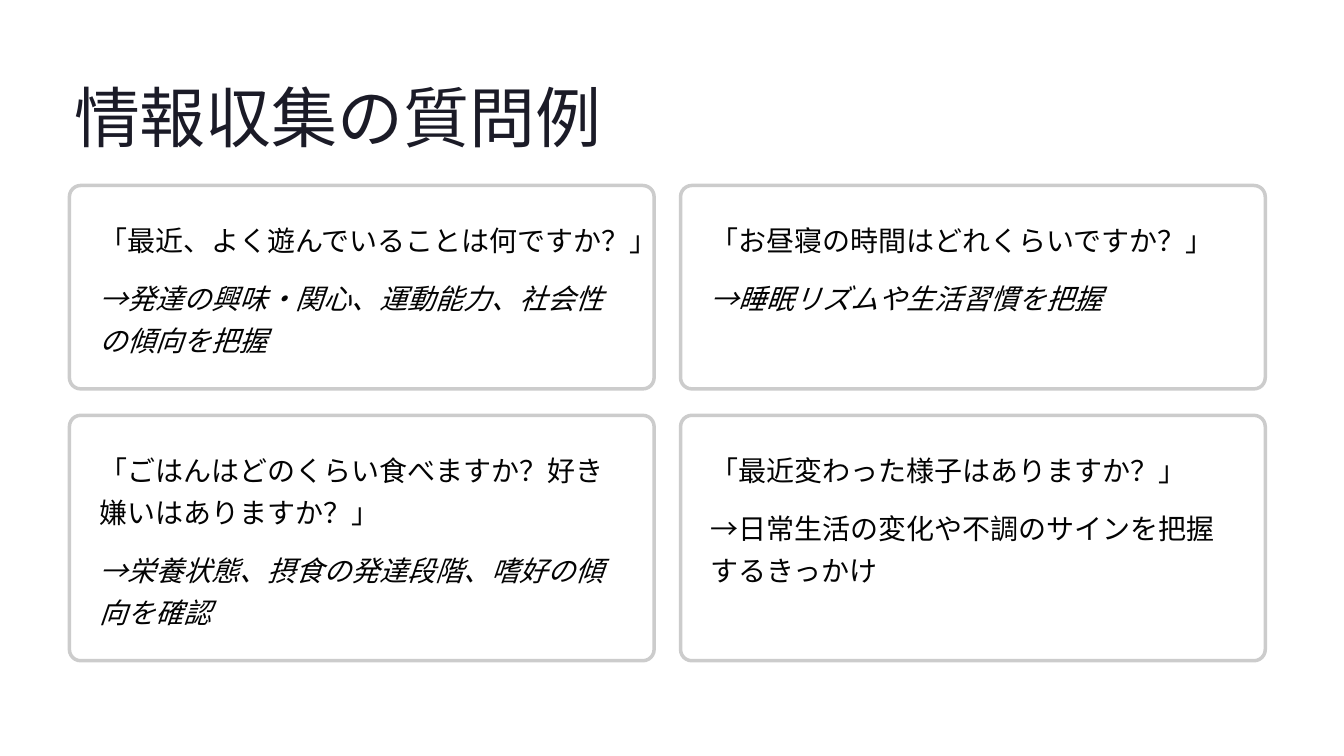
from dataclasses import dataclass

from lxml.etree import SubElement
from pptx import Presentation
from pptx.dml.color import RGBColor
from pptx.enum.shapes import MSO_SHAPE as Preset
from pptx.enum.text import MSO_ANCHOR as Anchor, MSO_AUTO_SIZE as AutoSize, PP_ALIGN as Align
from pptx.oxml.ns import qn
from pptx.slide import Slide
from pptx.text.text import TextFrame
from pptx.util import Cm, Pt


@dataclass(frozen=True)
class TextStyle:
    font: str
    size: float
    leading: float
    color: RGBColor


@dataclass(frozen=True)
class Theme:
    heading: TextStyle = TextStyle("Inter", 56.5, 70.5, RGBColor(0x1B, 0x1B, 0x27))
    body: TextStyle = TextStyle("Roboto", 24, 36, RGBColor(0x03, 0x03, 0x03))
    card_fill: RGBColor = RGBColor(0xFF, 0xFF, 0xFF)
    card_opacity: int = 95
    border: RGBColor = RGBColor(0xCC, 0xCC, 0xCC)
    border_width: float = 3


@dataclass(frozen=True)
class Card:
    question: str
    insight: str
    question_lines: int = 1
    insight_lines: int = 2
    italic_insight: bool = True


@dataclass(frozen=True)
class CardRow:
    height: float
    cards: tuple[Card, ...]


THEME = Theme()

# Lengths in centimetres
LEFT, TOP = 2.1, 5.61
CARD_WIDTH, GAP = 17.68, 0.8
PADDING, CORNER = 0.9, 0.34
LINE_HEIGHT, INSIGHT_GAP = 1.27, 0.48

ROWS = (
    CardRow(6.15, (
        Card("「最近、よく遊んでいることは何ですか？」",
             "→発達の興味・関心、運動能力、社会性の傾向を把握"),
        Card("「お昼寝の時間はどれくらいですか？」",
             "→睡眠リズムや生活習慣を把握", insight_lines=1),
    )),
    CardRow(7.42, (
        Card("「ごはんはどのくらい食べますか？好き嫌いはありますか？」",
             "→栄養状態、摂食の発達段階、嗜好の傾向を確認", question_lines=2),
        Card("「最近変わった様子はありますか？」",
             "→日常生活の変化や不調のサインを把握するきっかけ", italic_insight=False),
    )),
)


def write(frame: TextFrame, text: str, style: TextStyle,
          wrap: bool = False, italic: bool = False) -> None:
    frame.text = text
    frame.margin_left = frame.margin_right = frame.margin_top = frame.margin_bottom = 0
    frame.auto_size = AutoSize.NONE
    frame.word_wrap = wrap
    frame.vertical_anchor = Anchor.TOP
    paragraph = frame.paragraphs[0]
    paragraph.alignment = Align.LEFT
    paragraph.line_spacing = Pt(style.leading)
    paragraph.space_before = Pt(0)
    font = paragraph.font
    font.name, font.size, font.italic = style.font, Pt(style.size), italic
    font.color.rgb = style.color


def add_title(slide: Slide, text: str) -> None:
    title = slide.shapes.title
    title.left, title.top, title.width, title.height = Cm(2.24), Cm(2.21), Cm(20.04), Cm(2.51)
    write(title.text_frame, text, THEME.heading)


def add_panel(slide: Slide, left: float, top: float, height: float) -> None:
    panel = slide.shapes.add_shape(
        Preset.ROUNDED_RECTANGLE, Cm(left), Cm(top), Cm(CARD_WIDTH), Cm(height))
    panel.adjustments[0] = CORNER / height
    panel.shadow.inherit = False
    panel.fill.solid()
    panel.fill.fore_color.rgb = THEME.card_fill
    fill_color = panel.fill._xPr.find(qn("a:solidFill"))[0]
    SubElement(fill_color, qn("a:alpha"), val=str(THEME.card_opacity * 1000))
    panel.line.color.rgb = THEME.border
    panel.line.width = Pt(THEME.border_width)


def add_note(slide: Slide, left: float, top: float, text: str,
             lines: int, italic: bool = False) -> None:
    note = slide.shapes.add_textbox(
        Cm(left), Cm(top), Cm(CARD_WIDTH - 2 * PADDING), Cm(lines * LINE_HEIGHT))
    write(note.text_frame, text, THEME.body, wrap=lines > 1, italic=italic)


def add_card(slide: Slide, card: Card, left: float, top: float, height: float) -> None:
    add_panel(slide, left, top, height)
    text_left, question_top = left + PADDING, top + PADDING
    insight_top = question_top + card.question_lines * LINE_HEIGHT + INSIGHT_GAP
    add_note(slide, text_left, question_top, card.question, card.question_lines)
    add_note(slide, text_left, insight_top, card.insight, card.insight_lines,
             card.italic_insight)


def main() -> None:
    deck = Presentation()
    deck.slide_width, deck.slide_height = Cm(40.64), Cm(22.86)
    title_only = deck.slide_layouts[5]
    slide = deck.slides.add_slide(title_only)
    add_title(slide, "情報収集の質問例")
    top = TOP
    for row in ROWS:
        for column, card in enumerate(row.cards):
            add_card(slide, card, LEFT + column * (CARD_WIDTH + GAP), top, row.height)
        top += row.height + GAP
    deck.save("out.pptx")


if __name__ == "__main__":
    main()
